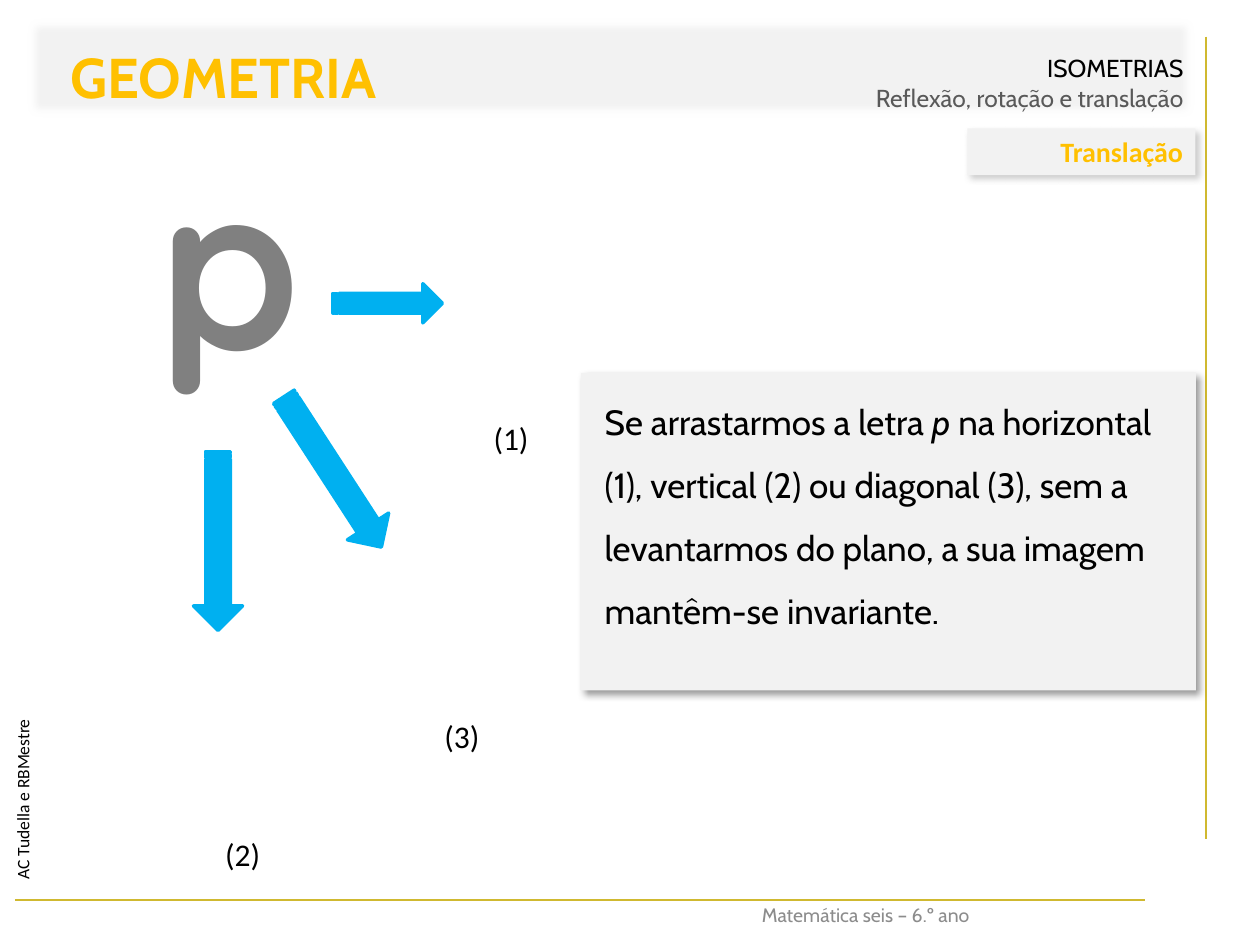
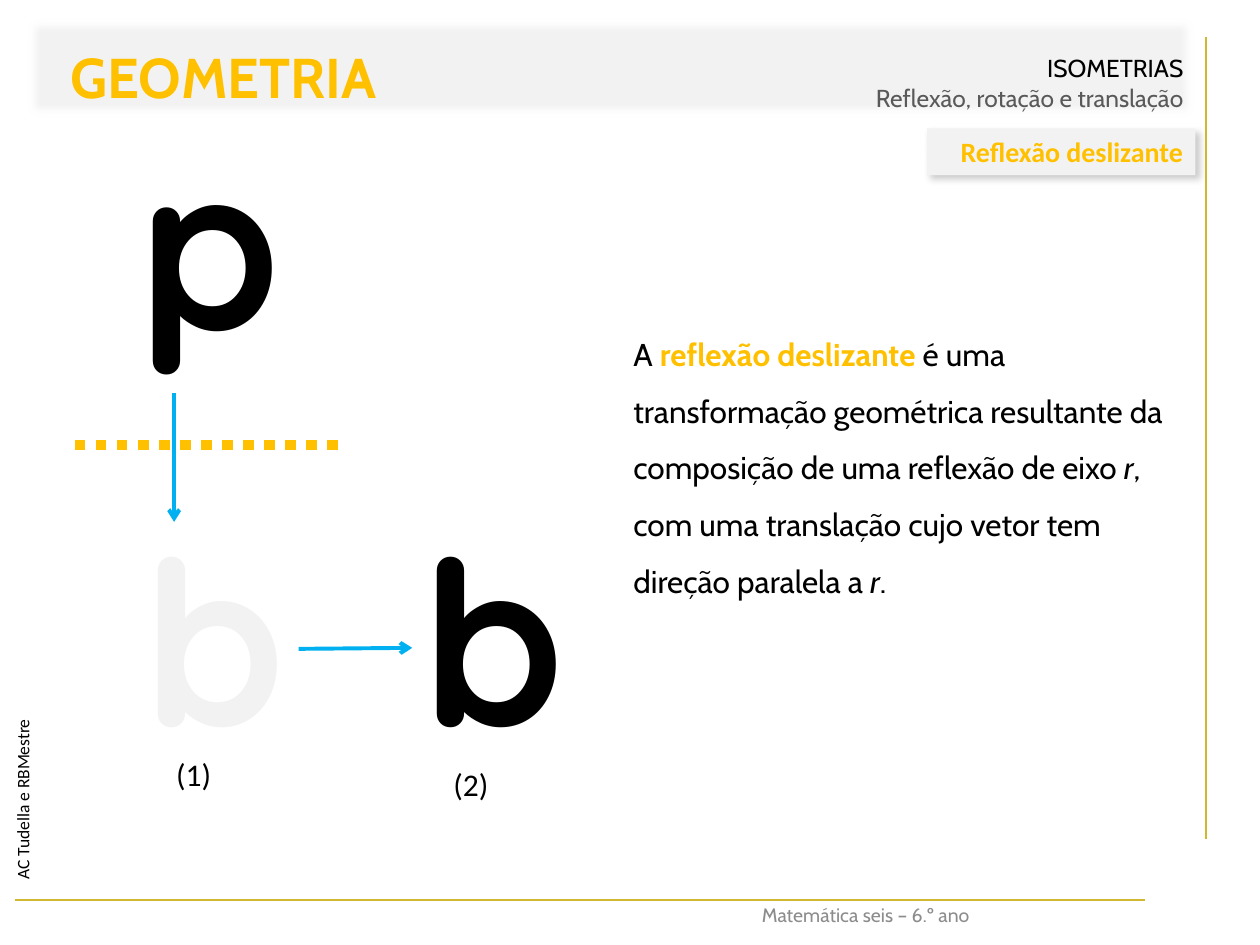
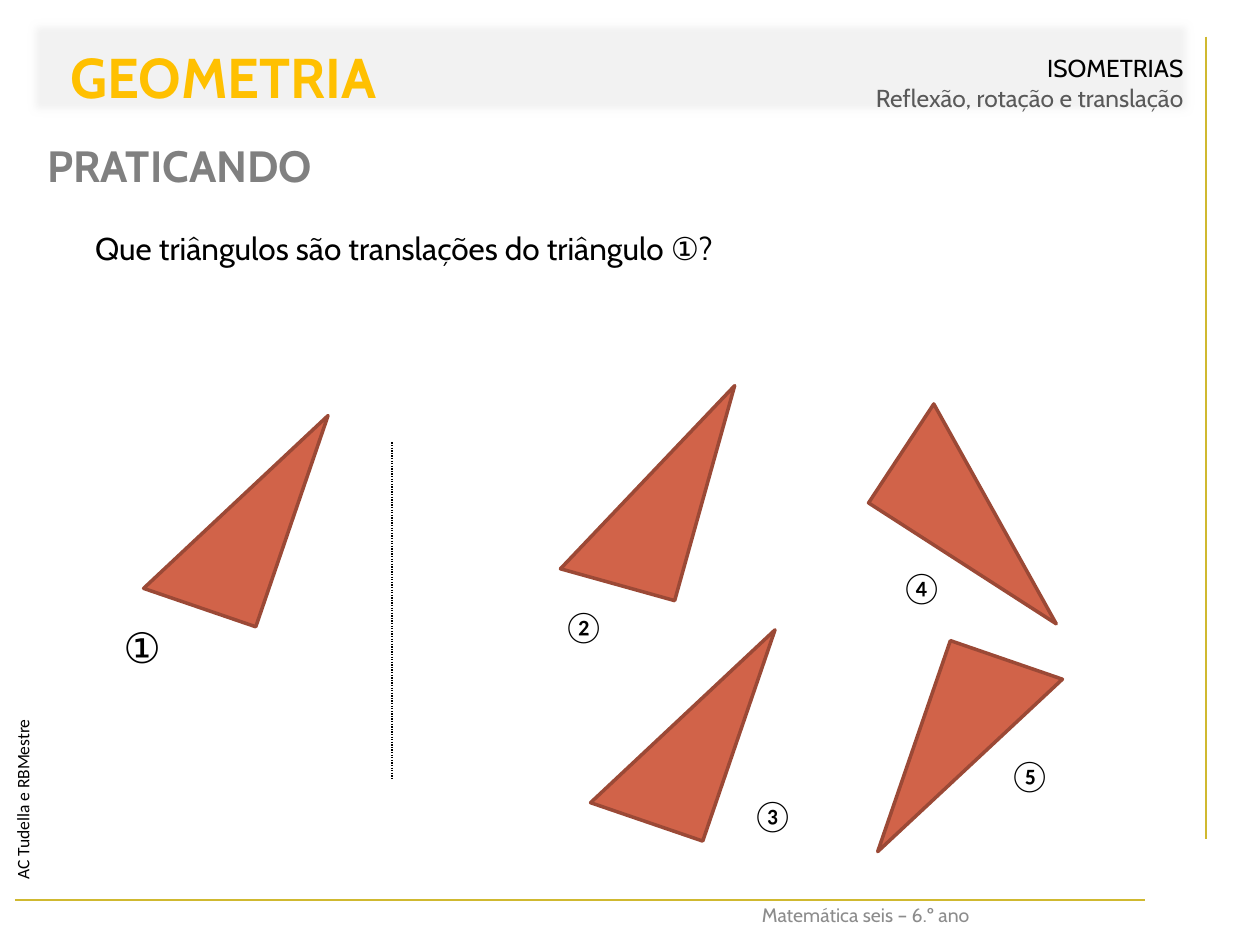
from lxml import etree
from pptx import Presentation
from pptx import util as u
from pptx.dml.color import RGBColor
from pptx.enum import dml, shapes, text
from pptx.oxml.ns import qn

COLORS = {
    "gold": "FFC000", "rule": "D0B930", "panel": "F2F2F2", "black": "000000",
    "gray": "808080", "subtitle": "595959", "footer": "8C8C8C",
    "blue": "00B0F0", "brick": "D16349", "brick_edge": "9B4936",
}
ALIGN = {"l": text.PP_ALIGN.LEFT, "c": text.PP_ALIGN.CENTER, "r": text.PP_ALIGN.RIGHT}
TOP, MIDDLE, BOTTOM = (text.MSO_ANCHOR.TOP, text.MSO_ANCHOR.MIDDLE, text.MSO_ANCHOR.BOTTOM)
DOTS = dml.MSO_LINE.ROUND_DOT
TRIANGLE_SIZE = (2.39, 4.5)


def rgb(name):
    return RGBColor.from_string(COLORS[name])


def cm(values):
    return [u.Cm(v) for v in values]


def apply(obj, values):
    for name, value in values.items():
        setattr(obj, name, value)


def write(sp, runs, size, font="Cabin", color="black", align="l", anchor=TOP, spacing=None, **style):
    tf = sp.text_frame
    apply(tf, {"word_wrap": True, "vertical_anchor": anchor})
    p = tf.paragraphs[0]
    apply(p, {"alignment": ALIGN[align], "line_spacing": spacing})
    for i, (words, own) in enumerate([(runs, {})] if isinstance(runs, str) else runs):
        if i and own.get("newline"):
            p.add_line_break()
        r = p.add_run()
        r.text = words
        apply(r.font, {"size": u.Pt(size), "name": font, **style})
        apply(r.font, {k: v for k, v in own.items() if k in ("bold", "italic")})
        r.font.color.rgb = rgb(own.get("color", color))


def add_text(s, box, runs, size, rotation=0, **style):
    sp = s.shapes.add_textbox(*cm(box))
    sp.rotation = rotation
    write(sp, runs, size, **style)
    return sp


def add_shape(s, kind, box, fill, edge=None, rotation=0):
    sp = s.shapes.add_shape(kind, *cm(box))
    sp.shadow.inherit = False
    sp.rotation = rotation
    sp.fill.solid()
    sp.fill.fore_color.rgb = rgb(fill)
    if edge:
        sp.line.color.rgb = rgb(edge)
        sp.line.width = u.Pt(2)
    else:
        sp.line.fill.background()
    return sp


def add_effect(sp, tag, **attrs):
    effects = sp._element.spPr.find(qn("a:effectLst"))
    return etree.SubElement(effects, qn(tag), {k: str(v) for k, v in attrs.items()})


def add_panel(s, box, shadow=None):
    sp = add_shape(s, shapes.MSO_SHAPE.RECTANGLE, box, "panel")
    if shadow:
        cast = add_effect(sp, "a:outerShdw", blurRad=u.Pt(4), dist=u.Pt(3),
                          dir=45 * 60000, algn="tl", rotWithShape=0)
        tint = etree.SubElement(cast, qn("a:srgbClr"), val=COLORS[shadow])
        etree.SubElement(tint, qn("a:alpha"), val="40000")
    return sp


def add_line(s, start, end, color, width, dash=None, arrow=False):
    c = s.shapes.add_connector(shapes.MSO_CONNECTOR.STRAIGHT, *cm(start + end))
    c.line.color.rgb = rgb(color)
    apply(c.line, {"width": u.Pt(width), "dash_style": dash})
    if arrow:
        etree.SubElement(c.line._get_or_add_ln(), qn("a:tailEnd"), type="arrow")
    etree.SubElement(c._element.spPr, qn("a:effectLst"))


def add_frame(prs):
    s = prs.slides.add_slide(prs.slide_layouts[6])
    add_line(s, (24.31, 0.74), (24.31, 16.92), "rule", 1.5)
    add_line(s, (0.3, 18.14), (23.09, 18.14), "rule", 1.5)
    add_text(s, (11.71, 18.14, 11.48, 0.69), "Matemática seis – 6.º ano", 11.1,
             color="footer", align="c", spacing=0.9)
    add_text(s, (-3.4, 13.44, 8.05, 1.02), "AC Tudella e RBMestre", 10, rotation=270, font="Calibri")
    header = add_panel(s, (0.51, 0.33, 23.6, 2.06))
    add_effect(header, "a:softEdge", rad=u.Pt(5))
    write(header, [("ISOMETRIAS", {}),
                   ("Reflexão, rotação e translação", {"color": "subtitle", "newline": True})],
          14, align="r", anchor=BOTTOM)
    add_text(s, (0.71, 0.74, 7.59, 1.63), "GEOMETRIA", 32, color="gold", align="c", bold=True)
    return s


def add_topic(s, words, width):
    tab = add_panel(s, (24.1 - width, 2.59, width, 0.94), "gray")
    write(tab, words, 16, font="Calibri", color="gold", align="r", anchor=MIDDLE, bold=True)


def add_letter(s, letter, left, top, color="black"):
    add_text(s, (left, top, 3.68, 5.82), letter, 130, font="Quicksand", color=color, align="c", bold=True)


def add_labels(s, labels):
    for words, left, top in labels:
        add_text(s, (left, top, 1.6, 1.02), words, 18, font="Calibri")


def add_block_arrow(s, box, rotation):
    add_shape(s, shapes.MSO_SHAPE.STRIPED_RIGHT_ARROW, box, "blue", "blue", rotation)


def add_triangle(s, left, top, rotation, apex=1):
    sp = add_shape(s, shapes.MSO_SHAPE.ISOSCELES_TRIANGLE, (left, top) + TRIANGLE_SIZE,
                   "brick", "brick_edge", rotation)
    sp.adjustments[0] = apex


def translation_slide(prs):
    s = add_frame(prs)
    add_topic(s, "Translação", 4.6)
    add_letter(s, "p", 2.79, 2.34, "gray")
    panel = add_panel(s, (11.71, 7.52, 12.4, 6.4), "black")
    panel.text_frame.margin_left = u.Cm(0.48)
    write(panel, [("Se arrastarmos a letra ", {}), ("p", {"italic": True}),
                  (" na horizontal (1), vertical (2) ou diagonal (3), sem a levantarmos"
                   " do plano, a sua imagem mantêm-se invariante.", {})], 20, spacing=1.5)
    add_block_arrow(s, (6.71, 5.72, 2.21, 0.79), 0)
    add_block_arrow(s, (4.9, 9.02, 3.61, 0.99), 57)
    add_block_arrow(s, (2.59, 10.41, 3.61, 0.99), 90)
    add_labels(s, [("(1)", 9.7, 8.33), ("(2)", 4.29, 16.71), ("(3)", 8.71, 14.33)])


def glide_slide(prs):
    s = add_frame(prs)
    add_topic(s, "Reflexão deslizante", 5.41)
    add_letter(s, "p", 2.39, 1.93)
    add_letter(s, "b", 2.49, 9.91, "panel")
    add_letter(s, "b", 8.1, 9.91)
    add_text(s, (12.52, 6.25, 11.38, 6.86),
             [("A ", {}), ("reflexão deslizante", {"color": "gold", "bold": True}),
              (" é uma transformação geométrica resultante da composição de uma reflexão de eixo", {}),
              (" r", {"italic": True}), (", com uma translação cujo vetor tem direção paralela a ", {}),
              ("r", {"italic": True}), (".", {})], 18, spacing=1.5)
    add_labels(s, [("(1)", 3.3, 15.09), ("(2)", 8.89, 15.29)])
    add_line(s, (6.81, 8.97), (1.3, 8.97), "gold", 6, DOTS)
    add_line(s, (3.51, 7.92), (3.51, 10.52), "blue", 2.25, arrow=True)
    add_line(s, (6.02, 13.08), (8.31, 13.06), "blue", 2.25, arrow=True)


def practice_slide(prs):
    s = add_frame(prs)
    add_text(s, (0.71, 2.34, 14, 1.96), "PRATICANDO", 25, color="gray", anchor=MIDDLE, bold=True)
    add_text(s, (1.67, 4.11, 22, 1.6), "Que triângulos são translações do triângulo ①?", 18, spacing=1.5)
    for triangle in [(3.56, 7.87, 18.9), (12.57, 12.19, 18.9), (18.85, 8.13, 123.4, 0.98),
                     (11.86, 7.37, 15.6), (18.36, 13.18, 199)]:
        add_triangle(s, *triangle)
    add_text(s, (2.24, 12.4, 1.6, 1.2), "①", 24)
    add_labels(s, [("②", 11.1, 12.12), ("③", 14.91, 15.93), ("④", 17.91, 11.33), ("⑤", 20.09, 15.11)])
    add_line(s, (7.9, 8.92), (7.9, 15.72), "black", 0.75, DOTS)


def main():
    prs = Presentation()
    apply(prs, {"slide_width": u.Cm(25.4), "slide_height": u.Cm(19.05)})
    for build in (translation_slide, glide_slide, practice_slide):
        build(prs)
    prs.save("out.pptx")


if __name__ == "__main__":
    main()
